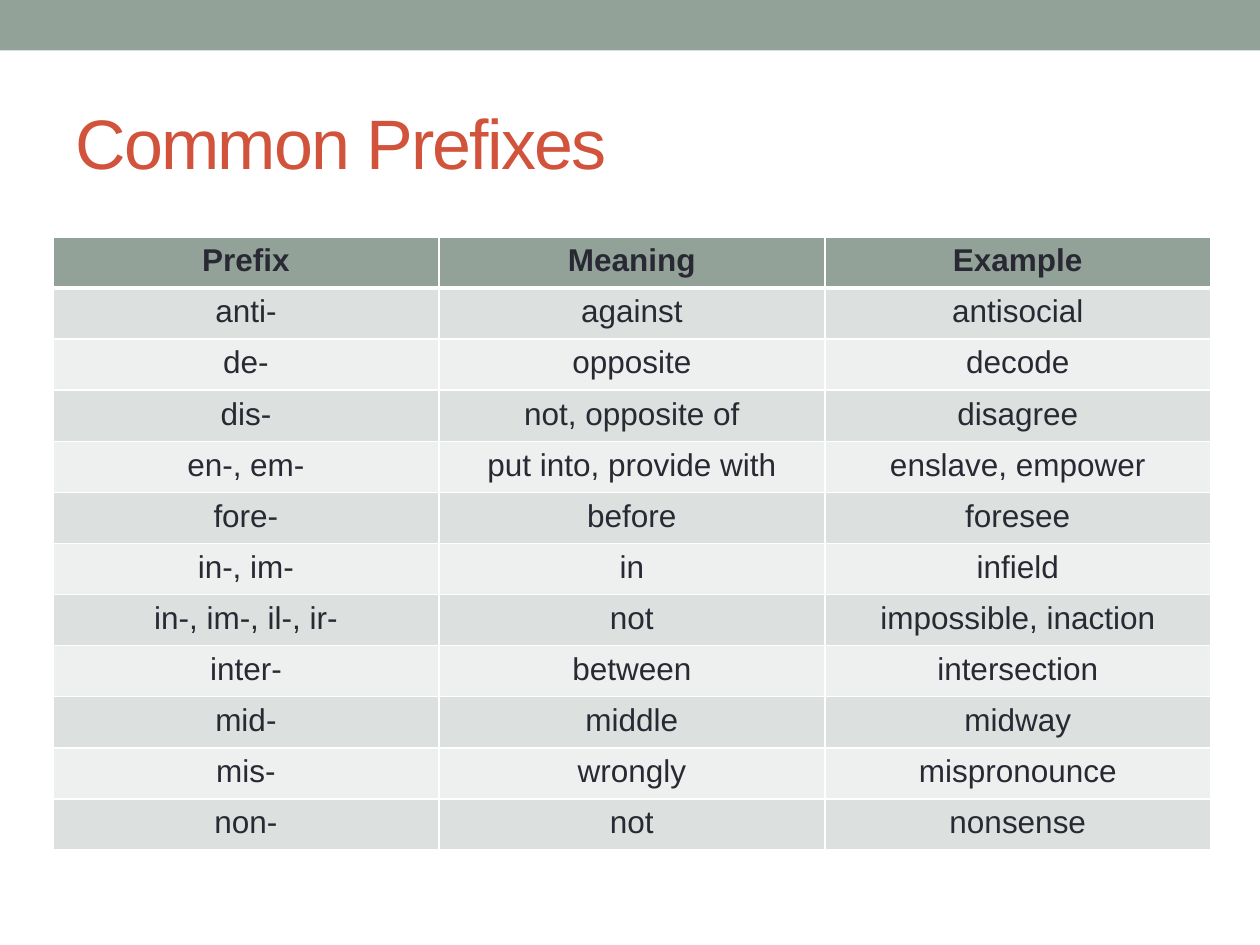
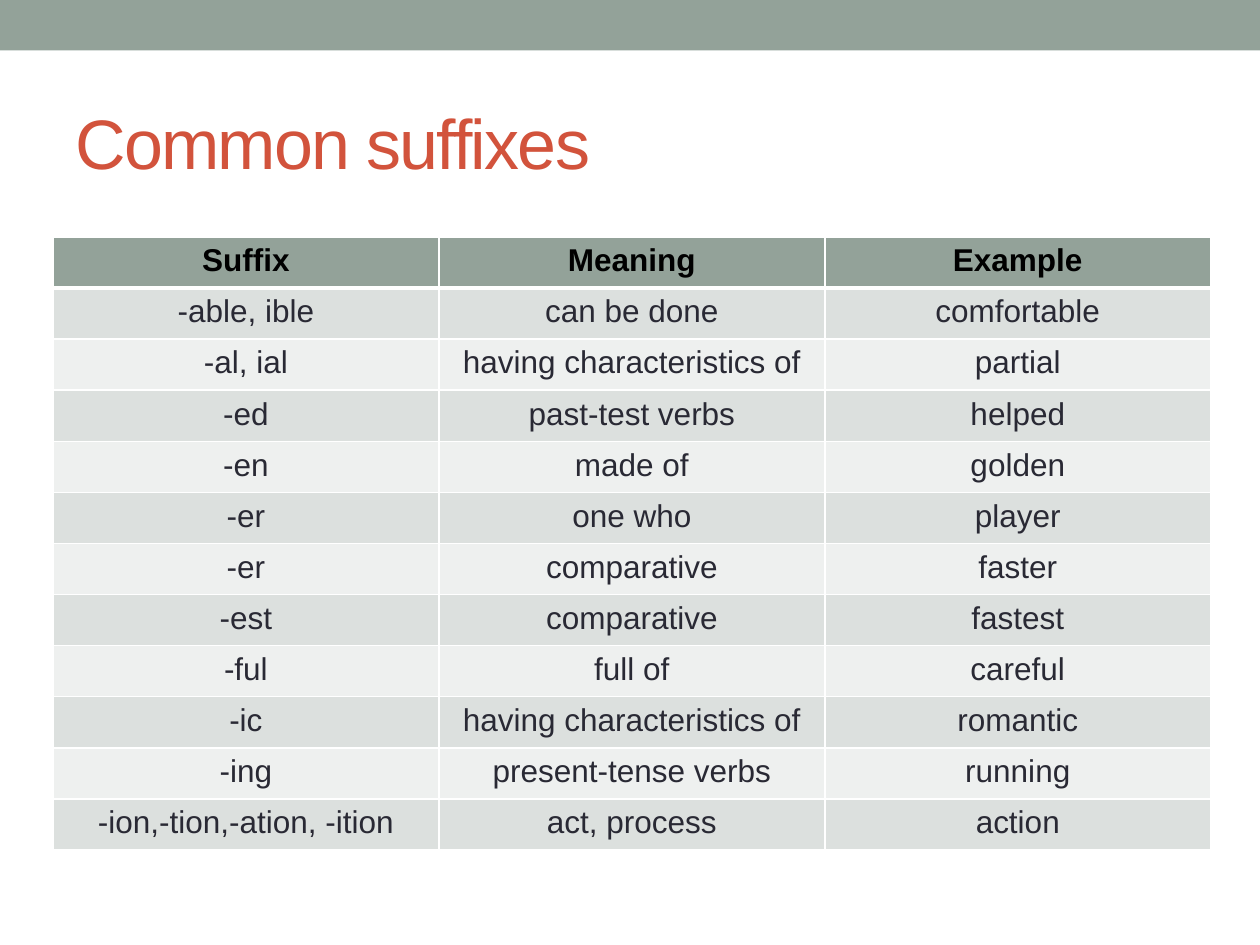
from lxml import etree
from pptx import Presentation
from pptx.dml.color import RGBColor
from pptx.enum.shapes import MSO_SHAPE
from pptx.enum.text import MSO_ANCHOR, PP_ALIGN
from pptx.oxml.ns import qn
from pptx.util import Inches, Pt

RECTANGLE = MSO_SHAPE.RECTANGLE
MIDDLE = MSO_ANCHOR.MIDDLE
LEFT, CENTER = PP_ALIGN.LEFT, PP_ALIGN.CENTER

SAGE = RGBColor(0x93, 0xA2, 0x99)
DARK_ROW = RGBColor(0xDC, 0xE0, 0xDE)
LIGHT_ROW = RGBColor(0xEE, 0xF0, 0xEF)
RUST = RGBColor(0xD2, 0x53, 0x3C)
INK = RGBColor(0x29, 0x29, 0x34)
BLACK = RGBColor(0x00, 0x00, 0x00)
WHITE = RGBColor(0xFF, 0xFF, 0xFF)

SLIDE_SIZE = Inches(10), Inches(7.5)
BAND_HEIGHT = Inches(0.4)
TITLE_AREA = Inches(0.5), Inches(0.58), Inches(9), Inches(1.08)
TABLE_AREA = Inches(0.42), Inches(1.88), Inches(9.19), Inches(4.87)
THIN, THICK = Pt(1), Pt(3)

TITLE_FONT = {"name": "Arial", "size": Pt(40), "bold": False}
BODY_FONT = {"name": "Arial", "size": Pt(18), "bold": False}
HEADER_FONT = {**BODY_FONT, "bold": True}

PREFIXES = [
    ("Prefix", "Meaning", "Example"),
    ("anti-", "against", "antisocial"),
    ("de-", "opposite", "decode"),
    ("dis-", "not, opposite of", "disagree"),
    ("en-, em-", "put into, provide with", "enslave, empower"),
    ("fore-", "before", "foresee"),
    ("in-, im-", "in", "infield"),
    ("in-, im-, il-, ir-", "not", "impossible, inaction"),
    ("inter-", "between", "intersection"),
    ("mid-", "middle", "midway"),
    ("mis-", "wrongly", "mispronounce"),
    ("non-", "not", "nonsense"),
]
SUFFIXES = [
    ("Suffix", "Meaning", "Example"),
    ("-able, ible", "can be done", "comfortable"),
    ("-al, ial", "having characteristics of", "partial"),
    ("-ed", "past-test verbs", "helped"),
    ("-en", "made of", "golden"),
    ("-er", "one who", "player"),
    ("-er", "comparative", "faster"),
    ("-est", "comparative", "fastest"),
    ("-ful", "full of", "careful"),
    ("-ic", "having characteristics of", "romantic"),
    ("-ing", "present-tense verbs", "running"),
    ("-ion,-tion,-ation, -ition", "act, process", "action"),
]


def write(frame, text, font, color, align):
    """Fill a text frame with one formatted run and return that run."""
    para = frame.paragraphs[0]
    para.alignment = align
    span = para.add_run()
    span.text = text
    for name, value in font.items():
        setattr(span.font, name, value)
    span.font.color.rgb = color
    return span


def add_band(page):
    band = page.shapes.add_shape(RECTANGLE, 0, 0, SLIDE_SIZE[0], BAND_HEIGHT)
    band.shadow.inherit = False
    band.fill.solid()
    band.fill.fore_color.rgb = SAGE
    band.line.fill.background()


def add_title(page, text):
    box = page.shapes.add_textbox(*TITLE_AREA)
    box.text_frame.word_wrap = True
    box.text_frame.vertical_anchor = MIDDLE
    span = write(box.text_frame, text, TITLE_FONT, RUST, LEFT)
    span.font._element.set("spc", "-100")


def set_borders(cell, widths):
    """Draw white cell borders; widths maps a side (L, R, T, B) to a length."""
    properties = cell._tc.get_or_add_tcPr()
    for side, width in widths.items():
        line = etree.SubElement(properties, qn(f"a:ln{side}"), w=str(width))
        fill = etree.SubElement(line, qn("a:solidFill"))
        etree.SubElement(fill, qn("a:srgbClr"), val=str(WHITE))


def add_word_table(page, rows, header_color):
    row_count, column_count = len(rows), len(rows[0])
    table = page.shapes.add_table(row_count, column_count, *TABLE_AREA).table
    table.first_row = table.horz_banding = False
    for column in table.columns:
        column.width = TABLE_AREA[2] // column_count
    for row in table.rows:
        row.height = TABLE_AREA[3] // row_count

    for r, words in enumerate(rows):
        is_header = r == 0
        font, color = (HEADER_FONT, header_color) if is_header else (BODY_FONT, INK)
        background = SAGE if is_header else DARK_ROW if r % 2 else LIGHT_ROW
        # The header and the first word row share the thick rule
        widths = {"L": THIN, "R": THIN,
                  "T": THICK if r == 1 else THIN,
                  "B": THICK if is_header else THIN}
        for c, word in enumerate(words):
            cell = table.cell(r, c)
            set_borders(cell, widths)
            cell.fill.solid()
            cell.fill.fore_color.rgb = background
            write(cell.text_frame, word, font, color, CENTER)


def add_word_page(deck, title, rows, header_color):
    page = deck.slides.add_slide(deck.slide_layouts[6])
    add_band(page)
    add_word_table(page, rows, header_color)
    add_title(page, title)


def main():
    deck = Presentation()
    deck.slide_width, deck.slide_height = SLIDE_SIZE
    add_word_page(deck, "Common Prefixes", PREFIXES, INK)
    add_word_page(deck, "Common suffixes", SUFFIXES, BLACK)
    deck.save("out.pptx")


if __name__ == "__main__":
    main()
